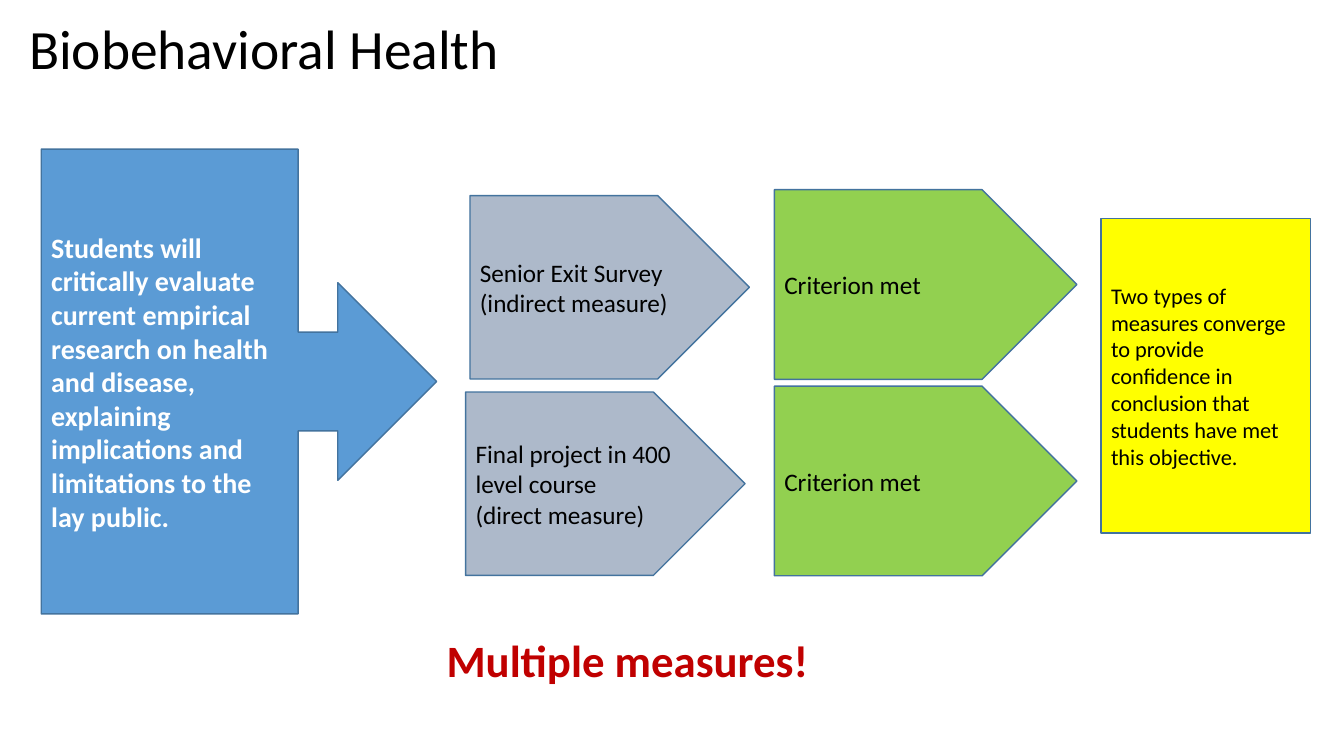
from dataclasses import dataclass
from pptx import Presentation
from pptx import util as u
from pptx.dml.color import RGBColor
from pptx.enum import shapes, text

# Content
TITLE = "Biobehavioral Health"
GOAL = ("Students will critically evaluate current empirical research on health "
        "and disease, explaining implications and limitations to the lay public.")
# Each row: left edge of the measure, its lines, its result
ROWS = [
    (11.84, ["Senior Exit Survey", "(indirect measure)"], "Criterion met"),
    (11.73, ["Final project in 400 level course", "(direct measure)"], "Criterion met"),
]
CLOSE = ("Two types of measures converge to provide confidence in conclusion "
         "that students have met this objective.")
SLOGAN = "Multiple measures!"


@dataclass(frozen=True)
class Theme:
    font: str = "Calibri"
    black: str = "000000"
    white: str = "FFFFFF"
    blue: str = "5B9BD5"
    edge: str = "43739E"
    gray: str = "ADB9CA"
    green: str = "92D050"
    yellow: str = "FFFF00"
    red: str = "C00000"
    head: float = 39.6
    slogan: float = 32
    goal: float = 20
    step: float = 18
    note: float = 16


T = Theme()
KIND = shapes.MSO_SHAPE

deck = Presentation()
deck.slide_width, deck.slide_height = u.Inches(13.33), u.Inches(7.5)
slide = deck.slides.add_slide(deck.slide_layouts[5])


def write(frame, lines, size, color, bold=False):
    frame.text = "\n".join(lines)
    for para in frame.paragraphs:
        para.alignment = text.PP_ALIGN.LEFT
        font = para.font
        font.name, font.size, font.bold = T.font, u.Pt(size), bold
        font.color.rgb = RGBColor.from_string(color)


def block(kind, box, fill, lines, size, color=T.black, bold=False):
    shape = slide.shapes.add_shape(kind, *map(u.Cm, box))
    shape.shadow.inherit = False
    shape.fill.solid()
    shape.fill.fore_color.rgb = RGBColor.from_string(fill)
    shape.line.color.rgb = RGBColor.from_string(T.edge)
    shape.line.width = u.Pt(1)
    frame = shape.text_frame
    frame.word_wrap = True
    frame.vertical_anchor = text.MSO_ANCHOR.MIDDLE
    write(frame, lines, size, color, bold)


# Title
title = slide.shapes.title
title.left, title.top, title.width, title.height = map(u.Cm, (0.48, 0.4, 32.54, 1.8))
title.text_frame.vertical_anchor = text.MSO_ANCHOR.MIDDLE
write(title.text_frame, [TITLE], T.head, T.black)
title.text_frame.paragraphs[0].line_spacing = 0.9

# Learning goal
block(KIND.RIGHT_ARROW_CALLOUT, (1.04, 3.76, 9.96, 11.71), T.blue,
      [GOAL], T.goal, T.white, True)

# Measures and their results, one row each
TOP, PITCH, DROP = 4.78, 4.95, 0.15
for i, (left, lines, result) in enumerate(ROWS):
    y = TOP + i * PITCH
    block(KIND.PENTAGON, (left, y + DROP, 7.04, 4.62), T.gray, lines, T.step)
    block(KIND.PENTAGON, (19.51, y, 7.62, 4.78), T.green, [result], T.step)

# Conclusion
block(KIND.RECTANGLE, (27.74, 5.51, 5.28, 7.92), T.yellow, [CLOSE], T.note)

# Slogan
label = slide.shapes.add_textbox(*map(u.Cm, (11, 15.82, 9.73, 1.63)))
label.text_frame.word_wrap = False
label.text_frame.auto_size = text.MSO_AUTO_SIZE.SHAPE_TO_FIT_TEXT
write(label.text_frame, [SLOGAN], T.slogan, T.red, True)

deck.save("out.pptx")
